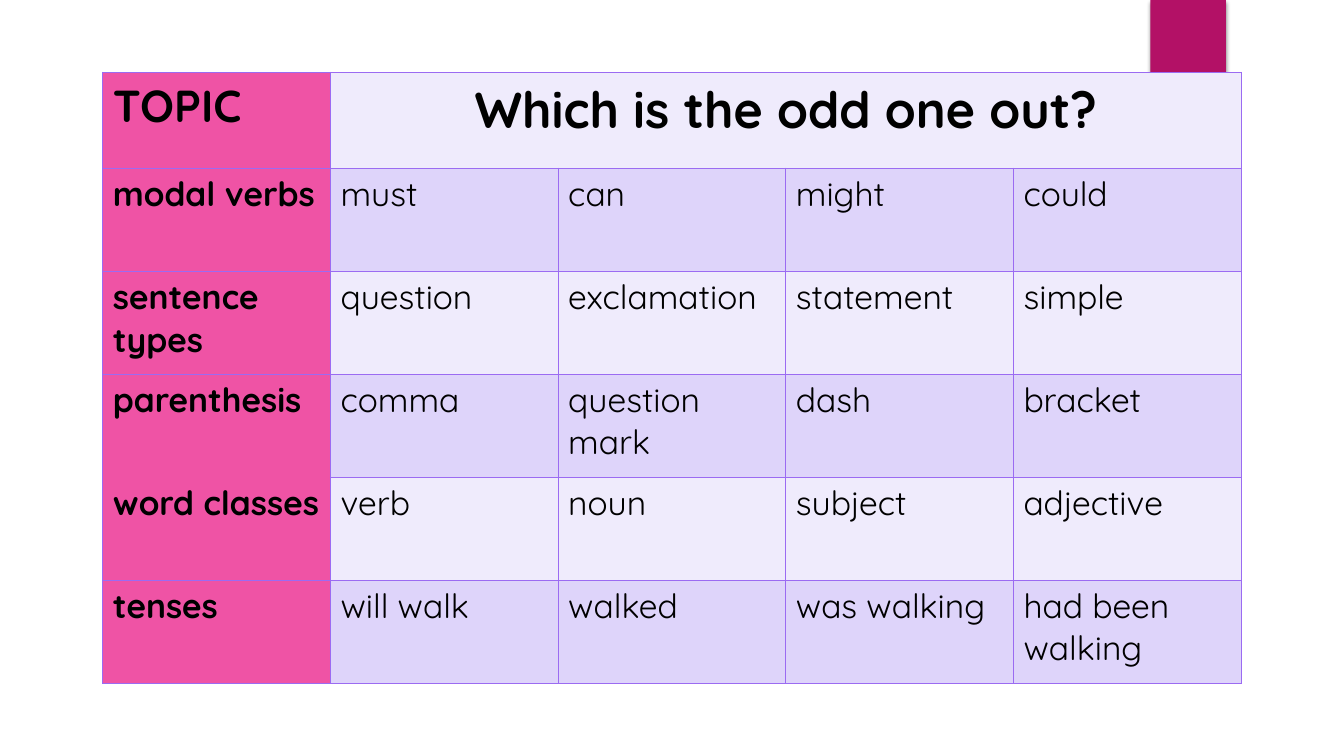
from lxml.etree import SubElement
from pptx import Presentation
from pptx.dml.color import RGBColor
from pptx.enum.shapes import MSO_SHAPE
from pptx.enum.text import PP_ALIGN
from pptx.oxml import parse_xml
from pptx.oxml.ns import nsdecls, qn
from pptx.util import Inches, Pt

BLACK = RGBColor(0x00, 0x00, 0x00)
MAGENTA = RGBColor(0xB3, 0x11, 0x66)
PINK = RGBColor(0xEF, 0x53, 0xA5)
PALE_LILAC = RGBColor(0xEF, 0xEB, 0xFC)
LILAC = RGBColor(0xDE, 0xD4, 0xFA)
VIOLET = RGBColor(0x9B, 0x6B, 0xF2)

TOPIC_FORMAT = {"size": Pt(32), "bold": True}
QUESTION_FORMAT = {"size": Pt(36), "bold": True}
LABEL_FORMAT = {"size": Pt(24), "bold": True}
WORD_FORMAT = {"size": Pt(24), "bold": False}

WORD_SETS = [
    ("modal verbs", "must", "can", "might", "could"),
    ("sentence types", "question", "exclamation", "statement", "simple"),
    ("parenthesis", "comma", "question mark", "dash", "bracket"),
    ("word classes", "verb", "noun", "subject", "adjective"),
    ("tenses", "will walk", "walked", "was walking", "had been walking"),
]
HEADER_HEIGHT = 0.95
# The labels of these two rows run together without a line between them
OPEN_SIDES = {(3, 0): "B", (4, 0): "T"}


def add_ribbon(slide, left, top, width, height):
    ribbon = slide.shapes.add_shape(
        MSO_SHAPE.RECTANGLE, *map(Inches, (left, top, width, height)))
    ribbon.fill.solid()
    ribbon.fill.fore_color.rgb = MAGENTA
    ribbon.line.fill.background()
    ribbon.shadow.inherit = False
    effects = ribbon.element.spPr.find(qn("a:effectLst"))
    effects.append(parse_xml(
        f'<a:outerShdw {nsdecls("a")} blurRad="{Pt(3)}" dist="{Pt(2)}" '
        'dir="5400000" rotWithShape="0"><a:srgbClr val="000000">'
        '<a:alpha val="45000"/></a:srgbClr></a:outerShdw>'))


def add_borders(cell, open_side):
    properties = cell._tc.get_or_add_tcPr()
    for position, side in enumerate("LRTB"):
        border = parse_xml(f'<a:ln{side} {nsdecls("a")} w="{Pt(1)}"/>')
        if side == open_side:
            SubElement(border, qn("a:noFill"))
        else:
            color = SubElement(SubElement(border, qn("a:solidFill")), qn("a:srgbClr"))
            color.set("val", str(VIOLET))
        properties.insert(position, border)


def write_cell(cell, text, text_format):
    paragraph = cell.text_frame.paragraphs[0]
    run = paragraph.add_run()
    run.text = text
    for name, value in {"name": "Quicksand", **text_format}.items():
        setattr(run.font, name, value)
    run.font.color.rgb = BLACK
    return paragraph


def add_quiz(slide, left, top, width, height):
    row_count, column_count = len(WORD_SETS) + 1, len(WORD_SETS[0])
    quiz = slide.shapes.add_table(
        row_count, column_count, *map(Inches, (left, top, width, height))).table
    for column in quiz.columns:
        column.width = Inches(width / column_count)
    for row in quiz.rows:
        row.height = Inches((height - HEADER_HEIGHT) / len(WORD_SETS))
    quiz.rows[0].height = Inches(HEADER_HEIGHT)

    # Fills and borders
    for r in range(row_count):
        for c in range(column_count):
            cell = quiz.cell(r, c)
            cell.fill.solid()
            cell.fill.fore_color.rgb = PINK if c == 0 else (PALE_LILAC, LILAC)[r % 2]
            add_borders(cell, OPEN_SIDES.get((r, c)))

    # Heading row
    quiz.cell(0, 1).merge(quiz.cell(0, column_count - 1))
    write_cell(quiz.cell(0, 0), "TOPIC", TOPIC_FORMAT)
    question = write_cell(quiz.cell(0, 1), "Which is the odd one out?", QUESTION_FORMAT)
    question.alignment = PP_ALIGN.CENTER

    # Topics and their words
    for r, word_set in enumerate(WORD_SETS, start=1):
        for c, word in enumerate(word_set):
            write_cell(quiz.cell(r, c), word, WORD_FORMAT if c else LABEL_FORMAT)


def main():
    deck = Presentation()
    deck.slide_width, deck.slide_height = Inches(13.33), Inches(7.5)
    slide = deck.slides.add_slide(deck.slide_layouts[6])
    add_ribbon(slide, 11.41, 0, 0.75, 1.25)
    add_quiz(slide, 1.02, 0.72, 11.29, 6.06)
    deck.save("out.pptx")


if __name__ == "__main__":
    main()
